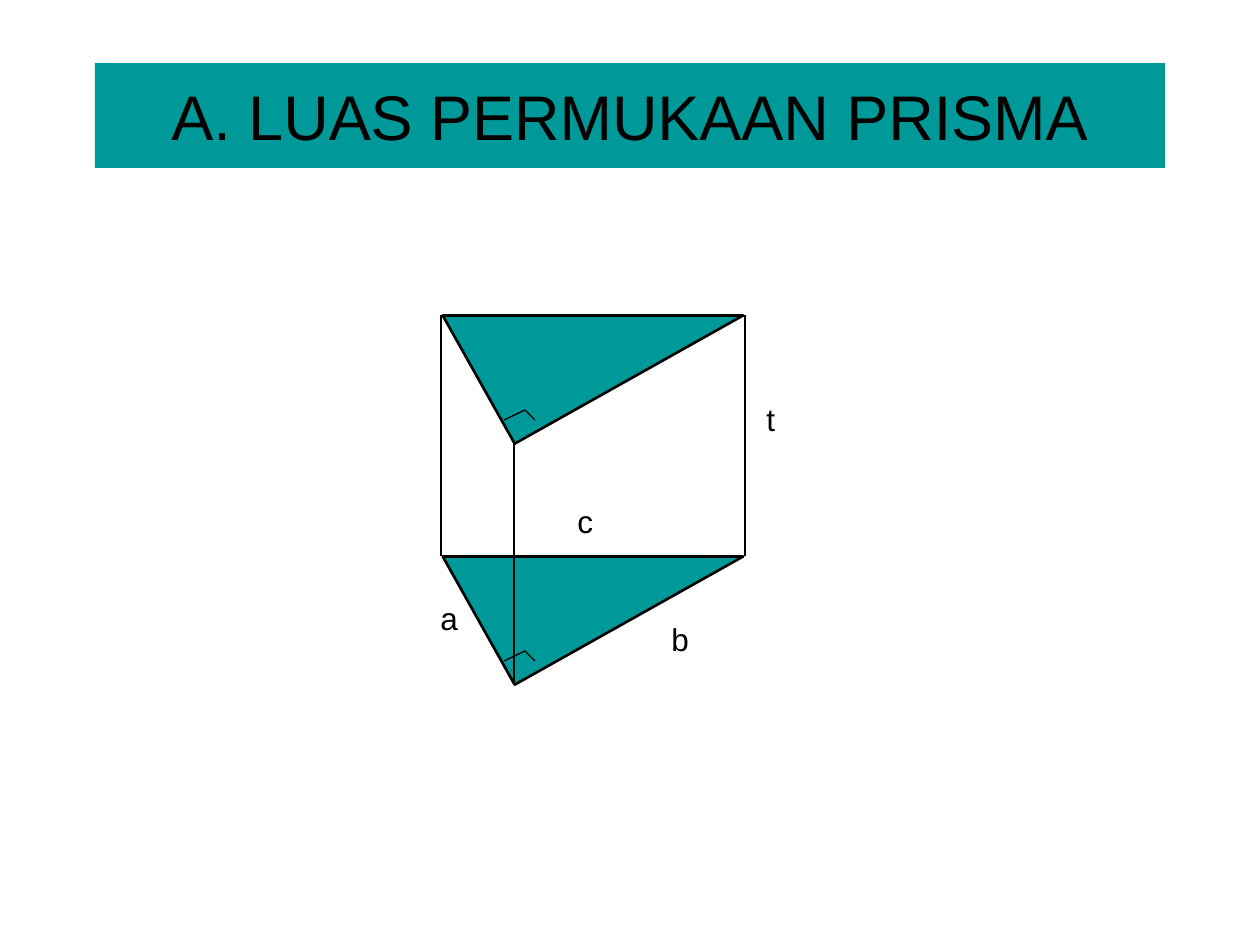
from dataclasses import dataclass

from pptx import Presentation
from pptx.dml.color import RGBColor as RGB
from pptx.enum.shapes import MSO_CONNECTOR as CONN, MSO_SHAPE as SHAPE
from pptx.enum.text import MSO_ANCHOR as ANCHOR, MSO_AUTO_SIZE as FIT, PP_ALIGN as ALIGN
from pptx.oxml.ns import qn
from pptx.util import Emu, Pt

PX_PER_INCH = 126


@dataclass(frozen=True)
class Theme:
    """Colours, type sizes and line widths of the slide."""
    font: str = "Arial"
    teal: RGB = RGB(0x00, 0x99, 0x99)
    ink: RGB = RGB(0, 0, 0)
    title: int = 36
    label: int = 18
    edge: float = 1.5
    mark: float = 0.75


THEME = Theme()


def px(n):
    """Turn pixels into EMU."""
    return Emu(round(n * 914400 / PX_PER_INCH))


def paint(item, color):
    """Give a fill or font color holder one solid colour."""
    item.solid()
    item.fore_color.rgb = color


def style_text(p, size):
    """Set the font of a paragraph."""
    p.font.name = THEME.font
    p.font.size = Pt(size)
    p.font.color.rgb = THEME.ink


def add_title(s, text, x, y, w, h):
    """Place the title placeholder as a filled banner."""
    sp = s.shapes.title
    sp.left, sp.top, sp.width, sp.height = map(px, (x, y, w, h))
    paint(sp.fill, THEME.teal)
    tf = sp.text_frame
    tf.text = text
    tf.auto_size = FIT.NONE
    tf.vertical_anchor = ANCHOR.MIDDLE
    p = tf.paragraphs[0]
    p.alignment = ALIGN.CENTER
    style_text(p, THEME.title)


def add_base(s, x, y, w, h, rotation):
    """Add one triangular base of the prism."""
    sp = s.shapes.add_shape(SHAPE.RIGHT_TRIANGLE, *map(px, (x, y, w, h)))
    sp.shadow.inherit = False
    sp.rotation = rotation
    paint(sp.fill, THEME.teal)
    sp.line.color.rgb = THEME.ink
    sp.line.width = Pt(THEME.edge)


def add_line(s, start, end, width):
    """Add a straight line between two points."""
    c = s.shapes.add_connector(CONN.STRAIGHT, *map(px, (*start, *end)))
    c.line.color.rgb = THEME.ink
    c.line.width = Pt(width)
    sp_pr = c._element.spPr
    sp_pr.append(sp_pr.makeelement(qn("a:effectLst"), {}))


def add_right_angle(s, x, y):
    """Add the two strokes that mark a right angle."""
    corner = (x + 21, y - 10)
    add_line(s, (x, y), corner, THEME.mark)
    add_line(s, corner, (x + 31, y), THEME.mark)


def add_label(s, text, x, y, w):
    """Add the letter of one edge."""
    tf = s.shapes.add_textbox(*map(px, (x, y, w, 50))).text_frame
    tf.word_wrap = False
    tf.auto_size = FIT.SHAPE_TO_FIT_TEXT
    tf.text = text
    style_text(tf.paragraphs[0], THEME.label)


def main():
    """Build the slide and save it."""
    prs = Presentation()
    prs.slide_width, prs.slide_height = px(1260), px(945)
    s = prs.slides.add_slide(prs.slide_layouts[5])
    add_title(s, "A. LUAS PERMUKAAN PRISMA", 95, 63, 1070, 105)

    rise = 241
    for lift in (0, rise):
        add_base(s, 462, 483 - lift, 262, 147, 330.7)
    for x, top in ((514, 442), (441, 315), (745, 315)):
        add_line(s, (x, top), (x, top + rise), THEME.edge)
    for lift in (0, rise):
        add_right_angle(s, 504, 661 - lift)
    for text, x, y, w in (("a", 428, 593, 43), ("b", 659, 614, 43),
                          ("c", 565, 496, 41), ("t", 754, 394, 34)):
        add_label(s, text, x, y, w)

    prs.save("out.pptx")


if __name__ == "__main__":
    main()
